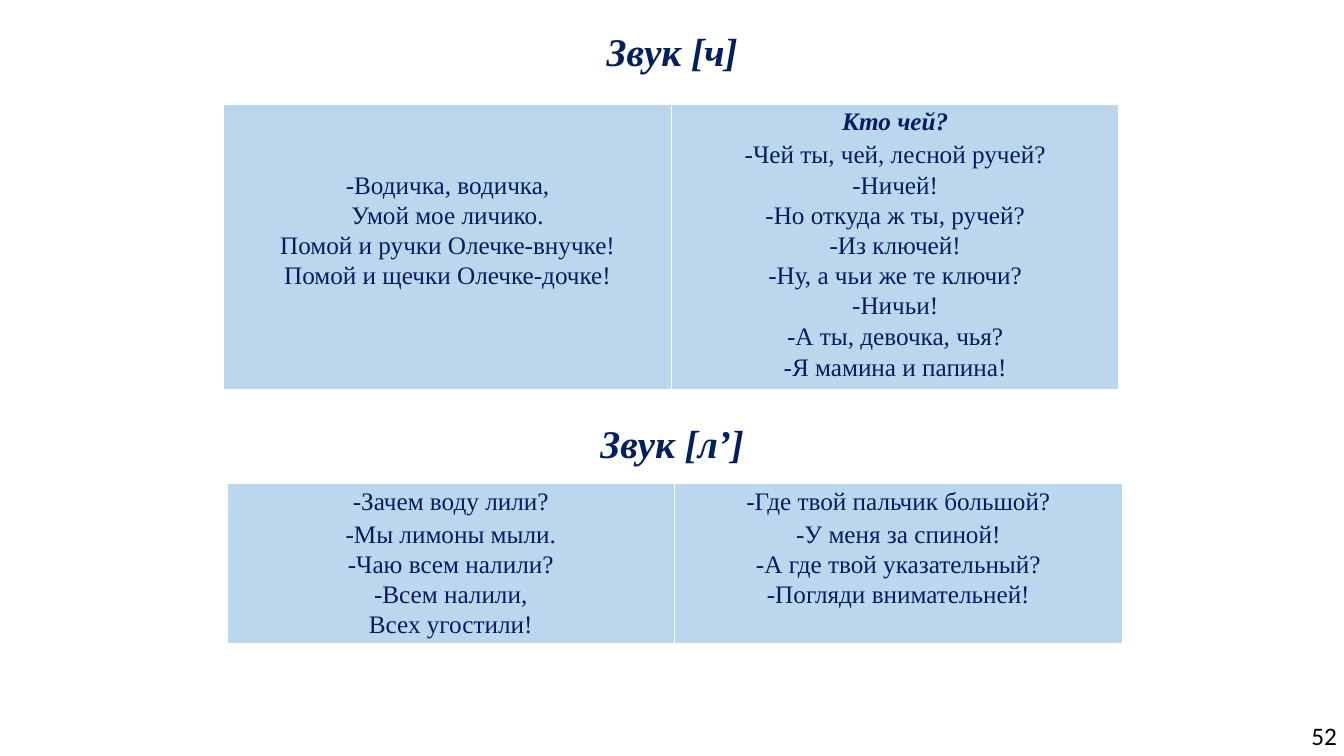
from lxml import etree
from pptx import Presentation
from pptx.dml.color import RGBColor
from pptx.enum.text import MSO_ANCHOR, PP_ALIGN
from pptx.oxml.ns import qn
from pptx.util import Cm, Pt

CENTER, LEFT = PP_ALIGN.CENTER, PP_ALIGN.LEFT
TOP = MSO_ANCHOR.TOP
COLORS = {"navy": "001F5F", "sky": "BCD6ED", "white": "FFFFFF", "black": "000000"}
SERIF, SANS = "Times New Roman", "Calibri"
COLUMN_WIDTH, LINE_ROW, FIRST_ROW = 11.28, 0.76, 0.91

WATER_RHYME = [
    "", "", "-Водичка, водичка,", "Умой мое личико.",
    "Помой и ручки Олечке-внучке!", "Помой и щечки Олечке-дочке!", "", "", "",
]
BROOK_RHYME = [
    "Кто чей?", "-Чей ты, чей, лесной ручей?", "-Ничей!",
    "-Но откуда ж ты, ручей?", "-Из ключей!", "-Ну, а чьи же те ключи?",
    "-Ничьи!", "-А ты, девочка, чья?", "-Я мамина и папина!",
]
LEMON_RHYME = [
    "-Зачем воду лили?", "-Мы лимоны мыли.", "-Чаю всем налили?",
    "-Всем налили,", "Всех угостили!",
]
FINGER_RHYME = [
    "-Где твой пальчик большой?", "-У меня за спиной!",
    "-А где твой указательный?", "-Погляди внимательней!", "",
]


def add_run(paragraph, text, size=18, color="navy", face=SERIF, emphasis=False):
    """Append one formatted run to a paragraph."""
    run = paragraph.add_run()
    run.text = text
    font = run.font
    font.name, font.size = face, Pt(size)
    font.bold = font.italic = emphasis
    font.color.rgb = RGBColor.from_string(COLORS[color])


def prepare_frame(frame, inset_top):
    """Clear the insets of a text frame and anchor its text at the top."""
    frame.margin_left = frame.margin_right = frame.margin_bottom = 0
    frame.margin_top = Cm(inset_top)
    frame.vertical_anchor = TOP
    frame.word_wrap = True


def fill_heading(heading, sound, left, top, width, height):
    """Place a sound heading in its box and write its text."""
    heading.left, heading.top = Cm(left), Cm(top)
    heading.width, heading.height = Cm(width), Cm(height)
    prepare_frame(heading.text_frame, 0.03)
    paragraph = heading.text_frame.paragraphs[0]
    paragraph.alignment = CENTER
    for part in ("Звук ", sound):
        add_run(paragraph, part, size=28, emphasis=True)


def set_borders(cell, widths):
    """Draw white cell borders of the given point widths, none for zero."""
    properties = cell._tc.get_or_add_tcPr()
    for position, (side, width) in enumerate(widths.items()):
        line = etree.Element(qn(f"a:ln{side}"), w=str(Pt(width)))
        if width:
            fill = etree.SubElement(line, qn("a:solidFill"))
            etree.SubElement(fill, qn("a:srgbClr"), val=COLORS["white"])
        else:
            etree.SubElement(line, qn("a:noFill"))
        properties.insert(position, line)


def add_rhymes(slide, rhymes, left, top, last_row, titled=()):
    """Set rhymes side by side in a table with one line in each row."""
    count = len(rhymes[0])
    heights = [FIRST_ROW] + [LINE_ROW] * (count - 2) + [last_row]
    table = slide.shapes.add_table(
        count, len(rhymes), Cm(left), Cm(top),
        Cm(COLUMN_WIDTH * len(rhymes)), Cm(sum(heights)),
    ).table
    table.first_row = table.horz_banding = False
    for row, height in zip(table.rows, heights):
        row.height = Cm(height)
    for column, rhyme in enumerate(rhymes):
        table.columns[column].width = Cm(COLUMN_WIDTH)
        for row, verse in enumerate(rhyme):
            cell = table.cell(row, column)
            cell.margin_left = cell.margin_right = cell.margin_bottom = 0
            cell.margin_top = Cm(0 if row else 0.1)
            cell.fill.solid()
            cell.fill.fore_color.rgb = RGBColor.from_string(COLORS["sky"])
            set_borders(cell, {
                "L": 1, "R": 1,
                "T": 0 if row else 1,
                "B": 3 if row == count - 1 else 0,
            })
            paragraph = cell.text_frame.paragraphs[0]
            paragraph.alignment = CENTER
            if row:
                paragraph.line_spacing = Pt(20.4)
            if verse:
                add_run(paragraph, verse, emphasis=row == 0 and column in titled)


def add_page_number(slide, number, left, top, width, height):
    """Write the page number in the corner box."""
    frame = slide.shapes.add_textbox(
        Cm(left), Cm(top), Cm(width), Cm(height)
    ).text_frame
    prepare_frame(frame, 0.3)
    paragraph = frame.paragraphs[0]
    paragraph.alignment = LEFT
    paragraph.line_spacing = Pt(18.1)
    add_run(paragraph, number, color="black", face=SANS)


def main():
    """Build the slide with rhymes for two sounds."""
    deck = Presentation()
    deck.slide_width, deck.slide_height = Cm(33.87), Cm(19.05)
    slide = deck.slides.add_slide(deck.slide_layouts[5])
    fill_heading(slide.shapes.title, "[ч]", 10.74, 0.66, 12.4, 1.42)
    add_rhymes(slide, [WATER_RHYME, BROOK_RHYME], 5.64, 2.62, 0.96, titled=(1,))
    soft_l = slide.shapes.add_textbox(0, 0, 0, 0)
    fill_heading(soft_l, "[л’]", 14.94, 10.54, 4, 1.24)
    add_rhymes(slide, [LEMON_RHYME, FINGER_RHYME], 5.72, 12.19, 0.87)
    add_page_number(slide, "52", 33.05, 17.98, 0.8, 1.14)
    deck.save("out.pptx")


if __name__ == "__main__":
    main()
